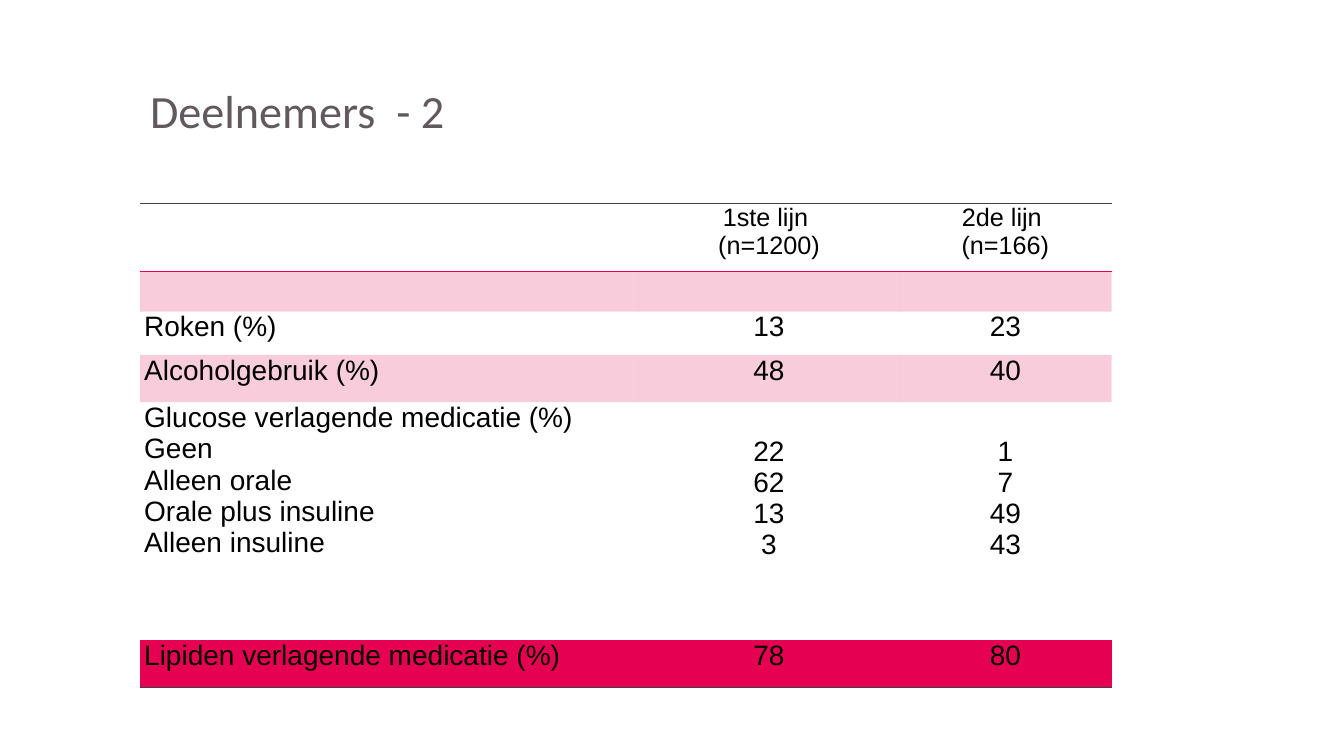
from lxml.etree import SubElement as Sub
from pptx import Presentation
from pptx.dml.color import RGBColor as RGB
from pptx.enum.text import MSO_ANCHOR as Anchor, PP_ALIGN as Align
from pptx.oxml.ns import qn
from pptx.util import Pt

PINK = RGB(0xE5, 0x00, 0x51)
GREY = RGB(0x61, 0x59, 0x5D)
DARK = RGB(0x40, 0x40, 0x40)
BLACK = RGB(0, 0, 0)
PLAIN = "{2D5ABB26-0587-4C30-8999-92F81FD0307C}"

HEAD = dict(name="Arial", size=Pt(18))
BODY = dict(name="Arial", size=Pt(20))
TITLE = dict(name="Calibri", size=Pt(33))

COLS = [356.4, 185.76, 151.92]
# Row height, then the text of each column
ROWS = [
    (48.24, "", "1ste lijn \n(n=1200)", "2de lijn \n(n=166)"),
    (28.8, "", "", ""),
    (30.96, "Roken (%)", "13", "23"),
    (33.84, "Alcoholgebruik (%)", "48", "40"),
    (169.92, "Glucose verlagende medicatie (%)\nGeen\nAlleen orale\n"
     "Orale plus insuline\nAlleen insuline",
     "22\n62\n13\n3", "1\n7\n49\n43"),
    (33.84, "Lipiden verlagende medicatie (%)", "78", "80"),
]
GROUP = 4
LAST = len(ROWS) - 1


def style(font, form, color):
    for key, value in form.items():
        setattr(font, key, value)
    font.color.rgb = color


def rule(cell, side, color, width):
    """Draw one border of a cell; side is T or B."""
    line = Sub(cell._tc.get_or_add_tcPr(), qn("a:ln" + side), w=str(Pt(width)))
    Sub(Sub(line, qn("a:solidFill")), qn("a:srgbClr"), val=str(color))


def tint(cell):
    """Fill a cell with pink at 20 % opacity."""
    cell.fill.solid()
    cell.fill.fore_color.rgb = PINK
    color = cell._tc.tcPr.find(".//" + qn("a:srgbClr"))
    Sub(color, qn("a:alpha"), val="20000")


def write(cell, text, row, col):
    # Values of the grouped row start one line below its heading
    top = 24 if row == GROUP and col else 0
    form = dict(margin_left=Pt(3), margin_right=Pt(3),
                margin_top=Pt(top), margin_bottom=0)
    for key, value in form.items():
        setattr(cell, key, value)
    cell.text = text
    for para in cell.text_frame.paragraphs:
        para.alignment = Align.CENTER if col else Align.LEFT
        style(para.font, BODY if row else HEAD, BLACK)
        for run in para.runs:
            style(run.font, BODY if row else HEAD, BLACK)


def add_grid(slide, left, top):
    width, height = sum(COLS), sum(row[0] for row in ROWS)
    frame = slide.shapes.add_table(len(ROWS), len(COLS), Pt(left), Pt(top),
                                   Pt(width), Pt(height))
    table = frame.table
    table.first_row = table.horz_banding = False
    table._tbl.tblPr.find(qn("a:tableStyleId")).text = PLAIN
    for col, size in enumerate(COLS):
        table.columns[col].width = Pt(size)
    for row, (size, *texts) in enumerate(ROWS):
        table.rows[row].height = Pt(size)
        for col, text in enumerate(texts):
            cell = table.cell(row, col)
            write(cell, text, row, col)
            if row == 0:
                rule(cell, "T", DARK, 0.5)
                rule(cell, "B", PINK, 1)
            if row == LAST:
                rule(cell, "B", DARK, 0.5)
            if row % 2:
                tint(cell)
            else:
                cell.fill.background()


def add_title(slide, left, top, width, height):
    title = slide.shapes.title
    box = dict(left=left, top=top, width=width, height=height)
    for key, value in box.items():
        setattr(title, key, Pt(value))
    frame = title.text_frame
    frame.vertical_anchor = Anchor.MIDDLE
    frame.word_wrap = True
    frame.text = "Deelnemers  - 2"
    para = frame.paragraphs[0]
    para.alignment = Align.LEFT
    para.line_spacing = 0.9
    style(para.runs[0].font, TITLE, GREY)


def main():
    deck = Presentation()
    deck.slide_width, deck.slide_height = Pt(960), Pt(540)
    slide = deck.slides.add_slide(deck.slide_layouts[5])
    add_grid(slide, 100, 145.5)
    add_title(slide, 100, 28.8, 860, 104.4)
    deck.save("out.pptx")


if __name__ == "__main__":
    main()
